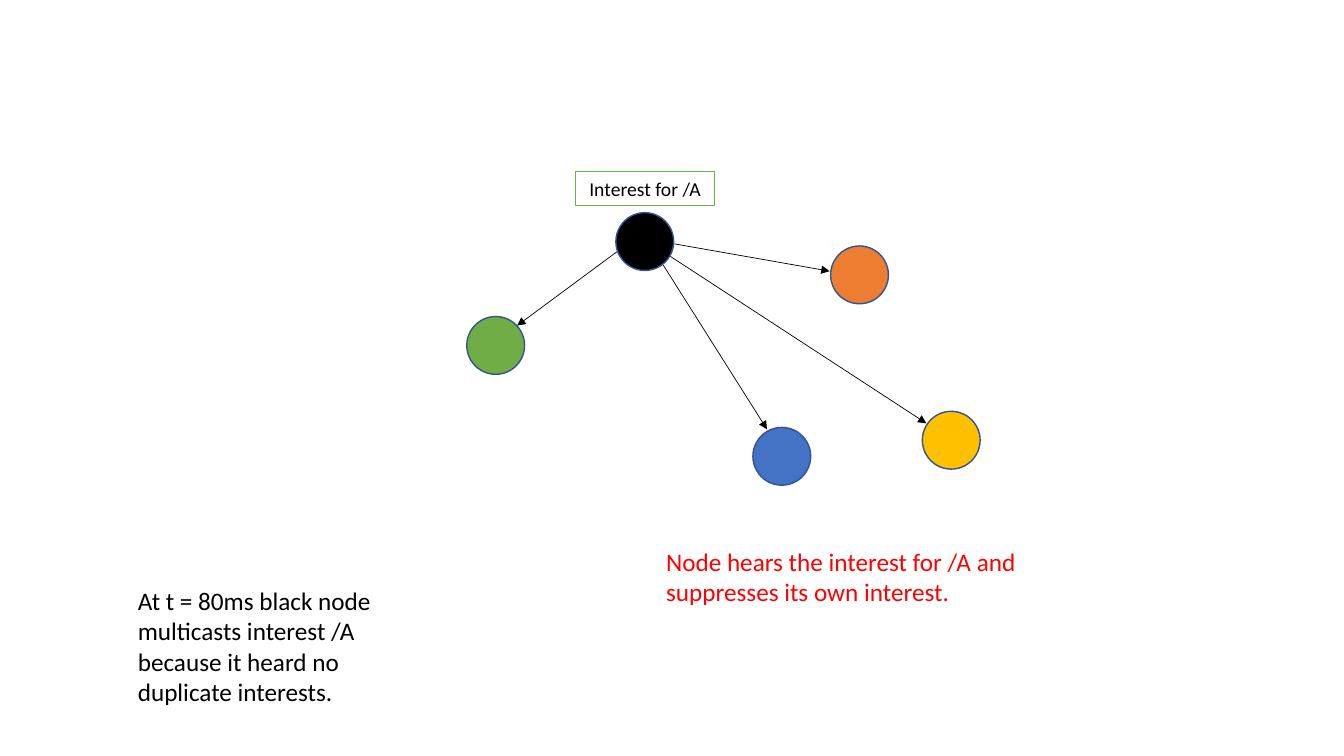
from lxml.etree import SubElement
from pptx import Presentation
from pptx.dml.color import RGBColor
from pptx.enum.shapes import MSO_CONNECTOR, MSO_SHAPE
from pptx.enum.text import MSO_ANCHOR, MSO_AUTO_SIZE, PP_ALIGN
from pptx.oxml.ns import qn
from pptx.util import Pt

COLORS = {
    "black": "000000",
    "white": "FFFFFF",
    "green": "70AD47",
    "yellow": "FFC000",
    "orange": "ED7D31",
    "blue": "4472C4",
    "outline": "325491",
    "red": "FF0000",
}
FONT = "Calibri"
NODE_SIZE = 41.3

# Left and top of each node, in points
NODES = {
    "green": (333.4, 226.1),
    "yellow": (658.8, 293.8),
    "black": (439.9, 151.9),
    "orange": (593.3, 175.7),
    "blue": (537.8, 305.3),
}

# Start and end of the arrows that leave the black node
ARROWS = [
    ((441.4, 179.3), (369.4, 232.6)),
    ((473.8, 189.4), (547.9, 306.7)),
    ((481.7, 174.2), (592.6, 193.7)),
    ((477.4, 182.2), (661.7, 302.4)),
]


def color(name):
    return RGBColor.from_string(COLORS[name])


def write(box, text, size, ink, align=PP_ALIGN.LEFT):
    para = box.text_frame.paragraphs[0]
    para.alignment = align
    span = para.add_run()
    span.text = text
    span.font.name = FONT
    span.font.size = Pt(size)
    span.font.color.rgb = color(ink)


def add_outlined(page, kind, left, top, width, height, fill, line):
    shape = page.shapes.add_shape(kind, Pt(left), Pt(top), Pt(width), Pt(height))
    shape.shadow.inherit = False
    shape.fill.solid()
    shape.fill.fore_color.rgb = color(fill)
    shape.line.color.rgb = color(line)
    shape.line.width = Pt(1)
    return shape


def add_message(page, text, left, top, width, height):
    box = add_outlined(page, MSO_SHAPE.RECTANGLE, left, top, width, height, "white", "green")
    box.text_frame.word_wrap = False
    box.text_frame.vertical_anchor = MSO_ANCHOR.MIDDLE
    write(box, text, 14, "black", PP_ALIGN.CENTER)


def add_note(page, text, ink, left, top, width, height):
    box = page.shapes.add_textbox(Pt(left), Pt(top), Pt(width), Pt(height))
    box.text_frame.word_wrap = True
    box.text_frame.auto_size = MSO_AUTO_SIZE.SHAPE_TO_FIT_TEXT
    write(box, text, 18, ink)


def add_arrow(page, start, end):
    points = [Pt(value) for value in start + end]
    arrow = page.shapes.add_connector(MSO_CONNECTOR.STRAIGHT, *points)
    arrow.line.color.rgb = color("black")
    arrow.line.width = Pt(0.5)
    SubElement(arrow.line._get_or_add_ln(), qn("a:tailEnd"), type="triangle")
    SubElement(arrow._element.spPr, qn("a:effectLst"))


def main():
    deck = Presentation()
    deck.slide_width, deck.slide_height = Pt(960), Pt(540)
    page = deck.slides.add_slide(deck.slide_layouts[6])

    # Multicast interest
    for start, end in ARROWS:
        add_arrow(page, start, end)
    add_message(page, "Interest for /A", 411.1, 122.6, 99.4, 24.2)

    # Explanations
    add_note(page, "At t = 80ms black node multicasts interest /A because it heard no duplicate interests.",
             "black", 91.4, 414.7, 216, 94.3)
    add_note(page, "Node hears the interest for /A and suppresses its own interest.",
             "red", 468.7, 386.6, 312.5, 51.1)

    # Network nodes
    for name, (left, top) in NODES.items():
        add_outlined(page, MSO_SHAPE.OVAL, left, top, NODE_SIZE, NODE_SIZE, name, "outline")

    deck.save("out.pptx")


if __name__ == "__main__":
    main()
